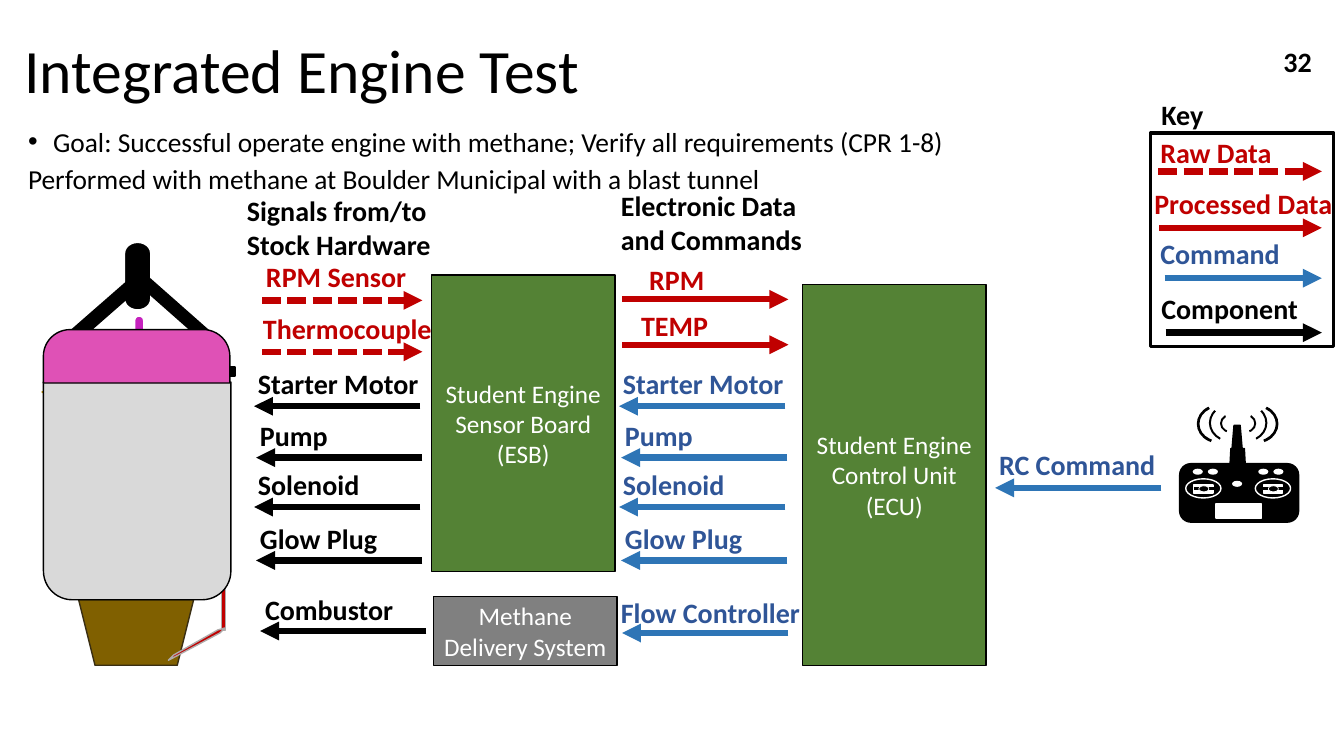
from lxml.etree import SubElement
from pptx import Presentation
from pptx.dml.color import RGBColor
from pptx.enum.dml import MSO_LINE
from pptx.enum.shapes import MSO_CONNECTOR, MSO_SHAPE as S
from pptx.enum.text import MSO_ANCHOR, PP_ALIGN
from pptx.oxml.ns import qn
from pptx.util import Inches, Pt

BLACK, WHITE, GREEN = "000000", "FFFFFF", "548235"
RED, BLUE, NAVY, GRAY = "C00000", "2E75B6", "2F5597", "808080"


def color(text):
    return RGBColor.from_string(text)


def write(frame, lines, size=20, ink=BLACK, bold=True, align=PP_ALIGN.LEFT,
          anchor=MSO_ANCHOR.TOP, ratio=None, gap=0, bullets=()):
    frame.word_wrap = True
    frame.vertical_anchor = anchor
    for i, line in enumerate(lines):
        para = frame.paragraphs[0] if i == 0 else frame.add_paragraph()
        para.text = line
        para.alignment = align
        if ratio:
            para.line_spacing = ratio
        if gap and i:
            para.space_before = Pt(gap)
        if i in bullets:
            props = para._p.get_or_add_pPr()
            props.set("marL", str(Inches(0.25)))
            props.set("indent", str(-Inches(0.25)))
            SubElement(props, qn("a:buFont")).set("typeface", "Arial")
            SubElement(props, qn("a:buChar")).set("char", "•")
        font = para.font
        font.name, font.size, font.bold = "Calibri", Pt(size), bold
        font.color.rgb = color(ink)


def label(shapes, lines, x, y, w=1.82, h=0.44, **style):
    box = shapes.add_textbox(Inches(x), Inches(y), Inches(w), Inches(h))
    write(box.text_frame, lines, **style)


def paint(shape, fill, line, width=1):
    shape.shadow.inherit = False
    if fill:
        shape.fill.solid()
        shape.fill.fore_color.rgb = color(fill)
    else:
        shape.fill.background()
    if line:
        shape.line.color.rgb = color(line)
        shape.line.width = Pt(width)
    else:
        shape.line.fill.background()


def draw(shapes, kind, x, y, w, h, fill=None, line=None, width=1,
         turn=0, flip="", adj=()):
    shape = shapes.add_shape(kind, Inches(x), Inches(y), Inches(w), Inches(h))
    paint(shape, fill, line, width)
    shape.rotation = turn
    for i, value in enumerate(adj):
        shape.adjustments[i] = value
    for axis in flip:
        shape.element.spPr.xfrm.set("flip" + axis, "1")
    return shape


def block(shapes, lines, x, y, w, h, fill):
    box = draw(shapes, S.RECTANGLE, x, y, w, h, fill, BLACK)
    write(box.text_frame, lines, size=18, ink=WHITE, bold=False,
          align=PP_ALIGN.CENTER, anchor=MSO_ANCHOR.MIDDLE)


def stroke(shapes, x1, x2, y, ink, width=4.5, dash=False, head=True):
    line = shapes.add_connector(MSO_CONNECTOR.STRAIGHT, Inches(x1), Inches(y),
                                Inches(x2), Inches(y))
    line.line.color.rgb = color(ink)
    line.line.width = Pt(width)
    if dash:
        line.line.dash_style = MSO_LINE.SQUARE_DOT
    if head:
        SubElement(line.line._ln, qn("a:tailEnd")).set("type", "triangle")
    SubElement(line.element.spPr, qn("a:effectLst"))


def signals(shapes):
    for name, x, y, w in (("RPM Sensor", 2.54, 2.53, 1.8),
                          ("Thermocouple", 2.51, 3.04, 2.01)):
        label(shapes, [name], x, y, w, ink=RED)
        stroke(shapes, 2.6, 4.19, y + 0.45, RED, dash=True)
    for name, x, y in (("RPM", 6.34, 2.97), ("TEMP", 6.26, 3.42)):
        label(shapes, [name], x, y - 0.41, 1.08, ink=RED)
        stroke(shapes, 6.17, 7.82, y, RED)
    for left, ink, tone in ((2.46, BLACK, BLACK), (6.08, BLUE, NAVY)):
        for name, shift, y in (("Starter Motor", 0, 4.03), ("Pump", 0.02, 4.54),
                               ("Solenoid", 0, 5.03), ("Glow Plug", 0.02, 5.56)):
            x = left + shift
            stroke(shapes, x + 1.71, x + 0.06, y, ink)
            label(shapes, [name], x, y - 0.44, h=0.4, ink=tone)
    for name, x, y, w, start, end, line, ink, tone in (
            ("Combustor", 2.53, 5.83, 1.82, 4.23, 2.58, 6.26, BLACK, BLACK),
            ("Flow Controller", 6.06, 5.86, 2.72, 7.82, 6.17, 6.28, BLUE, NAVY),
            ("RC Command", 9.81, 4.39, 1.82, 11.52, 9.87, 4.84, BLUE, NAVY)):
        stroke(shapes, start, end, line, ink)
        label(shapes, [name], x, y, w, ink=tone)


def legend(shapes):
    draw(shapes, S.RECTANGLE, 11.41, 1.32, 1.82, 2.12, line=BLACK, width=2.25)
    label(shapes, ["Key"], 11.42, 0.92)
    for name, x, y, start, line, ink, tone in (
            ("Raw Data", 11.41, 1.3, 11.49, 1.7, RED, RED),
            ("Processed Data", 11.35, 1.8, 11.5, 2.26, RED, RED),
            ("Command", 11.41, 2.3, 11.55, 2.76, BLUE, NAVY),
            ("Component", 11.42, 2.84, 11.56, 3.3, BLACK, BLACK)):
        label(shapes, [name], x, y, 2.1, ink=tone)
        stroke(shapes, start, 13.11, line, ink, dash=name == "Raw Data")


def remote(shapes):
    draw(shapes, S.ROUNDED_RECTANGLE, 11.7, 4.6, 1.18, 0.58, BLACK, BLACK,
         adj=[0.192])
    for x in (11.76, 12.45):
        draw(shapes, S.OVAL, x, 4.75, 0.35, 0.19, BLACK, WHITE)
        draw(shapes, S.RECTANGLE, x + 0.08, 4.81, 0.19, 0.08, WHITE, WHITE)
        stroke(shapes, x + 0.08, x + 0.28, 4.85, BLACK, 2.25, head=False)
        draw(shapes, S.OVAL, x + 0.13, 4.82, 0.1, 0.06, BLACK, WHITE, 0.5)
    draw(shapes, S.RECTANGLE, 12.06, 5, 0.45, 0.14, WHITE, WHITE)
    for x, y in ((11.83, 4.65), (11.98, 4.65), (12.48, 4.65), (12.63, 4.65),
                 (12.22, 4.77)):
        draw(shapes, S.OVAL, x, y, 0.1, 0.06, WHITE)
    draw(shapes, S.TRAPEZOID, 12.2, 4.45, 0.15, 0.15, BLACK, BLACK, adj=[0.054])
    draw(shapes, S.TRAPEZOID, 12.22, 4.22, 0.1, 0.23, BLACK, BLACK, adj=[0.195])
    for left, right, y, w, h, adj in (
            (12.1, 12.28, 4.11, 0.18, 0.18, (117.353, 200.616, 0.109)),
            (12.02, 12.15, 3.97, 0.39, 0.45, (129.464, 183.84, 0.051)),
            (11.9, 12.26, 3.98, 0.39, 0.45, (123.255, 196.343, 0.068))):
        draw(shapes, S.BLOCK_ARC, left, y, w, h, BLACK, turn=270, adj=adj)
        draw(shapes, S.BLOCK_ARC, right, y, w, h, BLACK, turn=90, flip="H",
             adj=adj)


def engine(shapes):
    draw(shapes, S.TRAPEZOID, 0.78, 5.95, 1.14, 0.65, "806000", "392E13",
         turn=180)
    draw(shapes, S.RECTANGLE, 2.2, 3.66, 0.04, 2.59, RED, "AFABAB")
    path = shapes.build_freeform(Inches(2.23), Inches(6.23), 1.0)
    path.add_line_segments([(Inches(x), Inches(y)) for x, y in (
        (2.18, 6.28), (1.71, 6.53), (1.67, 6.55), (1.72, 6.5), (2.16, 6.25))])
    paint(path.convert_to_shape(), RED, "AFABAB")
    draw(shapes, S.FLOWCHART_TERMINATOR, 1.3, 2.97, 0.05, 1.84, "BF9000", WHITE,
         turn=90)
    draw(shapes, S.FLOWCHART_TERMINATOR, 1.24, 3.23, 0.28, 0.09, "C521BD", WHITE,
         turn=90)
    draw(shapes, S.FLOWCHART_TERMINATOR, 1.03, 2.61, 0.67, 0.26, BLACK, WHITE,
         turn=90)
    draw(shapes, S.DIAGONAL_STRIPE, 0.66, 2.75, 0.64, 0.56, BLACK, flip="HV",
         adj=[0.666])
    draw(shapes, S.DIAGONAL_STRIPE, 1.48, 2.75, 0.6, 0.53, BLACK, flip="V",
         adj=[0.674])
    draw(shapes, S.RECTANGLE, 2.22, 3.64, 0.11, 0.09, BLACK, BLACK)
    draw(shapes, S.ROUND_2_SAME_RECTANGLE, 0.43, 3.79, 1.86, 2.16, "D9D9D9",
         BLACK, turn=180, adj=[0.154, 0])
    draw(shapes, S.ROUND_2_SAME_RECTANGLE, 0.43, 3.27, 1.85, 0.53, "DF51B6",
         BLACK, adj=[0.5, 0])


def main():
    deck = Presentation()
    deck.slide_width, deck.slide_height = Inches(13.33), Inches(7.5)
    slide = deck.slides.add_slide(deck.slide_layouts[5])
    shapes = slide.shapes
    title = shapes.title
    title.left, title.top = Inches(0.14), Inches(0)
    title.width, title.height = Inches(12.14), Inches(1.45)
    write(title.text_frame, ["Integrated Engine Test"], size=44, bold=False,
          anchor=MSO_ANCHOR.MIDDLE, ratio=0.9)
    label(shapes, [
        "Goal: Successful operate engine with methane; Verify all requirements (CPR 1-8)",
        "Performed with methane at Boulder Municipal with a blast tunnel"],
        0.18, 1.28, 11.5, 0.75, size=19.6, bold=False, ratio=0.7, gap=10,
        bullets=[0])
    block(shapes, ["Student Engine Control Unit", "(ECU)"],
          7.96, 2.82, 1.82, 3.78, GREEN)
    block(shapes, ["Student Engine Sensor Board", "(ESB)"],
          4.28, 2.73, 1.82, 2.94, GREEN)
    block(shapes, ["Methane Delivery System"], 4.3, 5.92, 1.82, 0.68, GRAY)
    signals(shapes)
    for part in (legend, remote, engine):
        part(shapes.add_group_shape().shapes)
    label(shapes, ["Electronic Data and Commands"], 6.06, 1.82, 2.21, 0.77)
    label(shapes, ["Signals from/to Stock Hardware"], 2.35, 1.87, 2.19, 0.77)
    label(shapes, ["32"], 10.11, 0.41, 3, 0.4, align=PP_ALIGN.RIGHT,
          anchor=MSO_ANCHOR.MIDDLE)
    deck.save("out.pptx")


if __name__ == "__main__":
    main()
